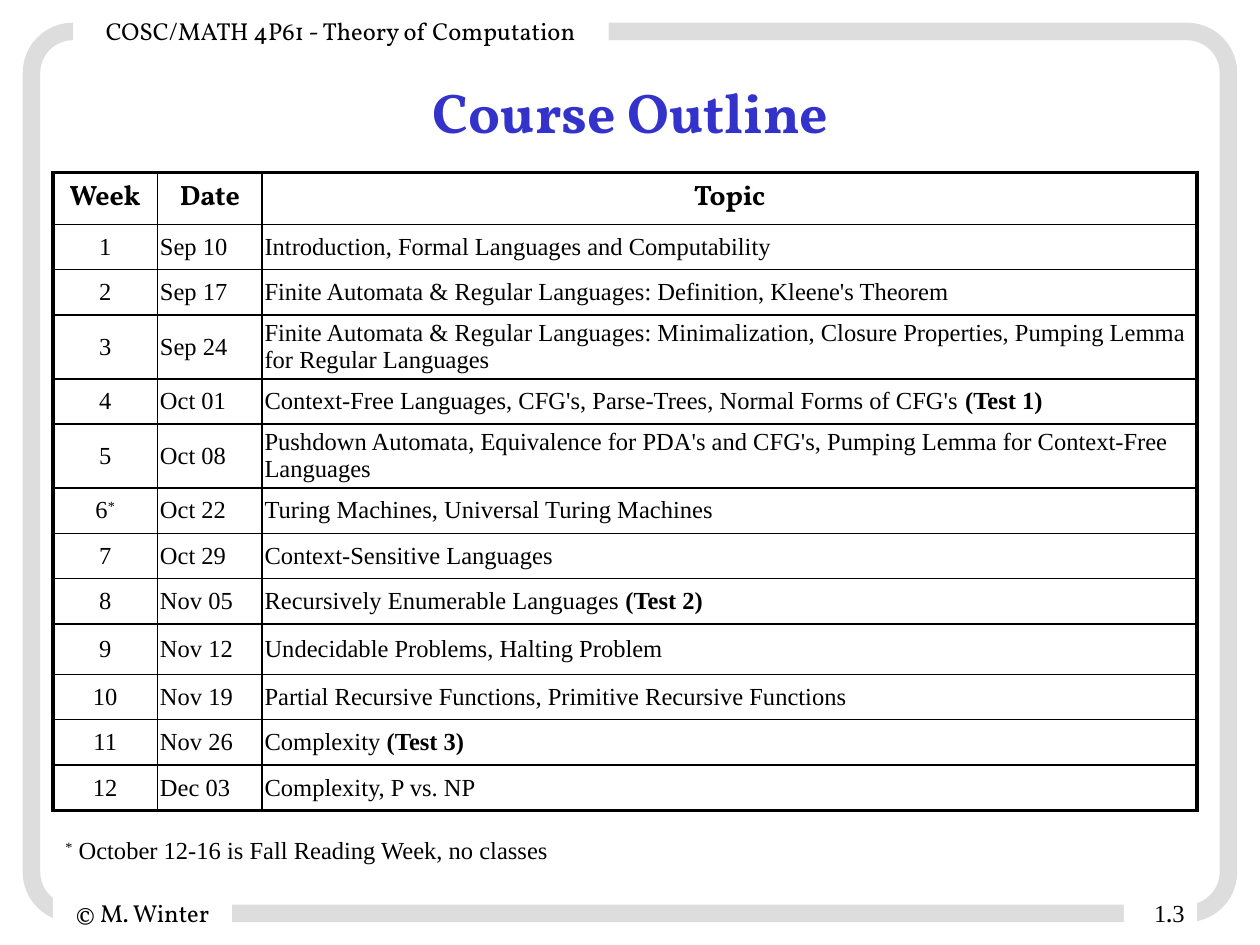
import pptx
import pptx.util
import pptx.dml.color
import pptx.enum.shapes
import pptx.enum.text
import pptx.oxml.ns
import lxml.etree

Inches = pptx.util.Inches
Pt = pptx.util.Pt
ALIGN = pptx.enum.text.PP_ALIGN
ANCHOR = pptx.enum.text.MSO_ANCHOR
SHAPE = pptx.enum.shapes.MSO_SHAPE
SERIF = "Times New Roman"
DISPLAY = "Vollkorn"
BLACK = "000000"
WHITE = "FFFFFF"

COLUMN_WIDTHS = [0.83, 0.83, 7.42]
HEADER_HEIGHT = 0.41
ROW_HEIGHT = 0.36
SPECIAL_HEIGHTS = {3: 0.47, 5: 0.47, 9: 0.4}
HEADINGS = ["Week", "Date", "Topic"]
SCHEDULE = [
    ("Sep 10", "Introduction, Formal Languages and Computability", ""),
    ("Sep 17", "Finite Automata & Regular Languages: Definition, Kleene's Theorem", ""),
    ("Sep 24", "Finite Automata & Regular Languages: Minimalization, Closure Properties, "
               "Pumping Lemma for Regular Languages", ""),
    ("Oct 01", "Context-Free Languages, CFG's, Parse-Trees, Normal Forms of CFG's ", "(Test 1)"),
    ("Oct 08", "Pushdown Automata, Equivalence for PDA's and CFG's, "
               "Pumping Lemma for Context-Free Languages", ""),
    ("Oct 22", "Turing Machines, Universal Turing Machines", ""),
    ("Oct 29", "Context-Sensitive Languages", ""),
    ("Nov 05", "Recursively Enumerable Languages ", "(Test 2)"),
    ("Nov 12", "Undecidable Problems, Halting Problem", ""),
    ("Nov 19", "Partial Recursive Functions, Primitive Recursive Functions", ""),
    ("Nov 26", "Complexity ", "(Test 3)"),
    ("Dec 03", "Complexity, P vs. NP", ""),
]
BREAK_WEEK = 6


def rgb(color):
    return pptx.dml.color.RGBColor.from_string(color)


def add_span(para, text, font=SERIF, size=14, color=BLACK, bold=False, raised=False):
    span = para.add_run()
    span.text = text
    span.font.name = font
    span.font.size = Pt(size)
    span.font.bold = bold
    span.font.color.rgb = rgb(color)
    if raised:
        span._r.get_or_add_rPr().set("baseline", "30000")


def add_frame(page, left, top, width, height):
    frame = page.shapes.add_shape(
        SHAPE.ROUNDED_RECTANGLE, Inches(left), Inches(top), Inches(width), Inches(height))
    frame.adjustments[0] = 0.047
    frame.shadow.inherit = False
    frame.fill.background()
    frame.line.color.rgb = rgb("DDDDDD")
    frame.line.width = Pt(10)


def add_label(page, left, top, width, height, parts, align=ALIGN.CENTER):
    label = page.shapes.add_shape(
        SHAPE.RECTANGLE, Inches(left), Inches(top), Inches(width), Inches(height))
    label.shadow.inherit = False
    label.fill.solid()
    label.fill.fore_color.rgb = rgb(WHITE)
    label.line.fill.background()
    label.text_frame.vertical_anchor = ANCHOR.MIDDLE
    para = label.text_frame.paragraphs[0]
    para.alignment = align
    for text, font in parts:
        add_span(para, text, font)


def add_text_box(page, left, top, width, height, anchor, align):
    box = page.shapes.add_textbox(Inches(left), Inches(top), Inches(width), Inches(height))
    box.text_frame.word_wrap = True
    box.text_frame.vertical_anchor = anchor
    para = box.text_frame.paragraphs[0]
    para.alignment = align
    return para


def add_title(page, left, top, width, height):
    para = add_text_box(page, left, top, width, height, ANCHOR.MIDDLE, ALIGN.CENTER)
    add_span(para, "Course Outline", DISPLAY, 32, "3333CC", bold=True)


def add_footnote(page, left, top, width, height):
    para = add_text_box(page, left, top, width, height, ANCHOR.TOP, ALIGN.LEFT)
    add_span(para, "*", raised=True)
    add_span(para, " October 12-16 is Fall Reading Week, no classes")


def set_borders(cell, outer_sides):
    properties = cell._tc.get_or_add_tcPr()
    for index, side in enumerate(["L", "R", "T", "B"]):
        width = Pt(2.25) if side in outer_sides else Pt(1)
        border = lxml.etree.Element(pptx.oxml.ns.qn("a:ln" + side), w=str(int(width)))
        fill = lxml.etree.SubElement(border, pptx.oxml.ns.qn("a:solidFill"))
        lxml.etree.SubElement(fill, pptx.oxml.ns.qn("a:srgbClr"), val=BLACK)
        properties.insert(index, border)


def style_cell(cell, row, column):
    cell.fill.background()
    if row > 0:
        cell.vertical_anchor = ANCHOR.MIDDLE
        cell.margin_left = cell.margin_right = Inches(0.02)
        cell.margin_top = cell.margin_bottom = Inches(0.02)
    edges = {"L": column == 0, "R": column == len(HEADINGS) - 1,
             "T": row == 0, "B": row == len(SCHEDULE)}
    set_borders(cell, [side for side, outer in edges.items() if outer])
    para = cell.text_frame.paragraphs[0]
    para.alignment = ALIGN.CENTER if row == 0 or column == 0 else ALIGN.LEFT
    return para


def add_schedule(page, left, top):
    heights = [HEADER_HEIGHT] + [
        SPECIAL_HEIGHTS.get(week, ROW_HEIGHT) for week in range(1, len(SCHEDULE) + 1)]
    graphic = page.shapes.add_table(
        len(heights), len(COLUMN_WIDTHS), Inches(left), Inches(top),
        Inches(sum(COLUMN_WIDTHS)), Inches(sum(heights)))
    table = graphic.table
    table.first_row = False
    table.horz_banding = False
    for column, width in zip(table.columns, COLUMN_WIDTHS):
        column.width = Inches(width)
    for row, height in zip(table.rows, heights):
        row.height = Inches(height)

    for column, heading in enumerate(HEADINGS):
        para = style_cell(table.cell(0, column), 0, column)
        add_span(para, heading, DISPLAY, 16, bold=True)

    for week, (date, topic, test) in enumerate(SCHEDULE, start=1):
        paras = [style_cell(table.cell(week, column), week, column)
                 for column in range(len(HEADINGS))]
        for para, text in zip(paras, [str(week), date, topic]):
            add_span(para, text)
        if week == BREAK_WEEK:
            add_span(paras[0], "*", raised=True)
        if test:
            add_span(paras[2], test, bold=True)


def main():
    deck = pptx.Presentation()
    deck.slide_width = Inches(10)
    deck.slide_height = Inches(7.5)
    page = deck.slides.add_slide(deck.slide_layouts[6])
    add_frame(page, 0.25, 0.25, 9.5, 7)
    add_label(page, 0.42, 7.08, 1.42, 0.33, [("© M. Winter", DISPLAY)])
    add_label(page, 0.58, 0.08, 4.25, 0.33,
              [("COSC/MATH 4P61 - Theory of Computation", DISPLAY)])
    add_label(page, 8.92, 7.08, 0.58, 0.33,
              [("1", SERIF), (".", DISPLAY), ("3", SERIF)], ALIGN.RIGHT)
    add_title(page, 3.14, 0.6, 3.73, 0.57)
    add_schedule(page, 0.42, 1.37)
    add_footnote(page, 0.42, 6.58, 6.75, 0.34)
    deck.save("out.pptx")


if __name__ == "__main__":
    main()
